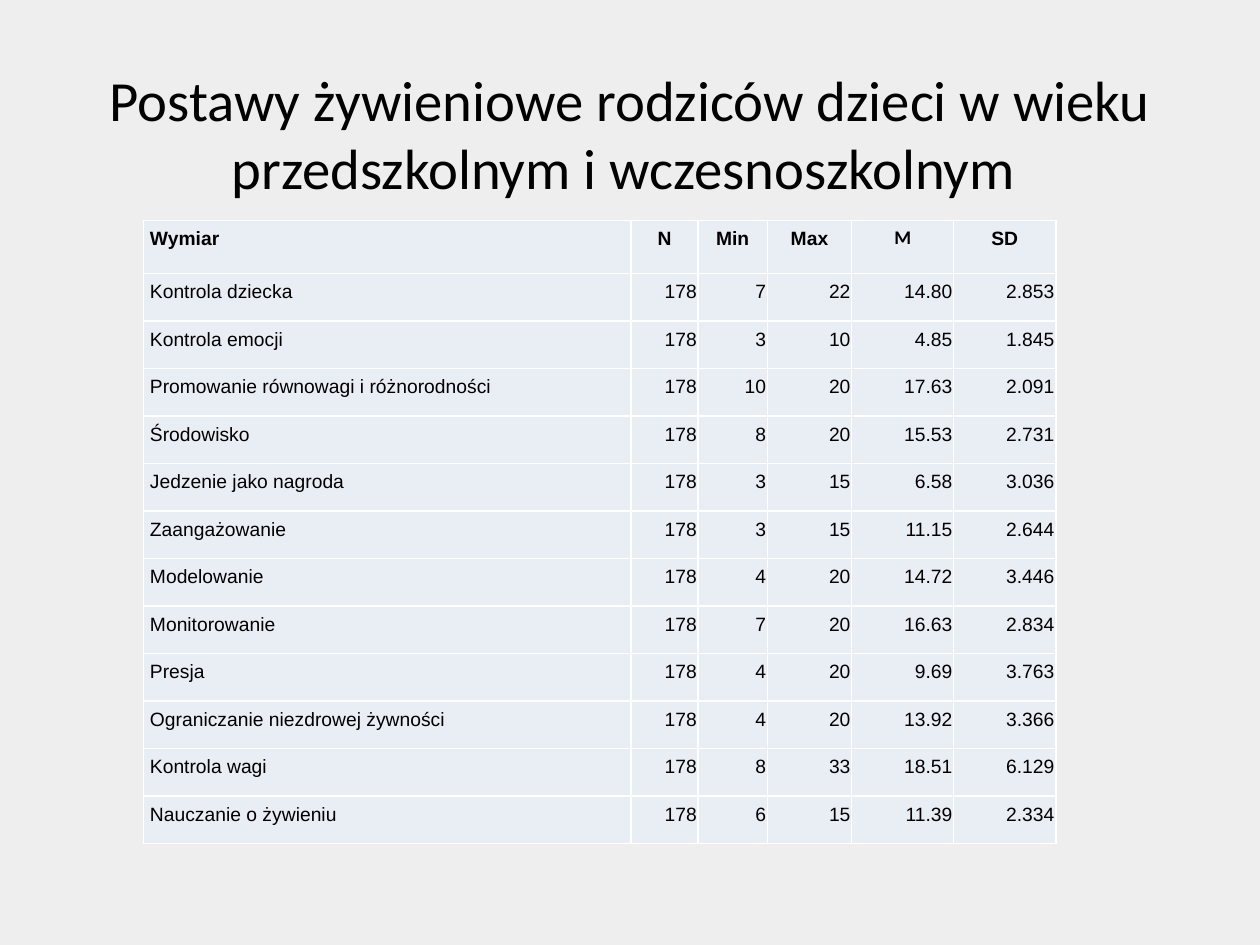
from lxml import etree
from pptx import Presentation
from pptx.dml.color import RGBColor
from pptx.enum.text import MSO_ANCHOR, PP_ALIGN
from pptx.oxml.ns import qn
from pptx.util import Inches, Pt

BOTTOM = MSO_ANCHOR.BOTTOM
LEFT, CENTER, RIGHT = PP_ALIGN.LEFT, PP_ALIGN.CENTER, PP_ALIGN.RIGHT

BACK, BLACK, WHITE, PALE = "EEEEEE", "000000", "FFFFFF", "E9EDF4"

# The trailing space shifts the centred second line a little to the left
TITLE = "Postawy żywieniowe rodziców dzieci w wieku przedszkolnym i wczesnoszkolnym "
HEADS = ["Wymiar", "N", "Min", "Max", "M", "SD"]
COUNT = "178"
ROWS = [
    ("Kontrola dziecka", "7", "22", "14.80", "2.853"),
    ("Kontrola emocji", "3", "10", "4.85", "1.845"),
    ("Promowanie równowagi i różnorodności", "10", "20", "17.63", "2.091"),
    ("Środowisko", "8", "20", "15.53", "2.731"),
    ("Jedzenie jako nagroda", "3", "15", "6.58", "3.036"),
    ("Zaangażowanie", "3", "15", "11.15", "2.644"),
    ("Modelowanie", "4", "20", "14.72", "3.446"),
    ("Monitorowanie", "7", "20", "16.63", "2.834"),
    ("Presja", "4", "20", "9.69", "3.763"),
    ("Ograniczanie niezdrowej żywności", "4", "20", "13.92", "3.366"),
    ("Kontrola wagi", "8", "33", "18.51", "6.129"),
    ("Nauczanie o żywieniu", "6", "15", "11.39", "2.334"),
]
WIDTHS = [3.87, 0.53, 0.55, 0.67, 0.81, 0.81]
HEIGHT, HEAD = 4.95, 0.42


def color(code):
    return RGBColor.from_string(code)


def style(para, face, size, align, bold=False):
    para.alignment = align
    font = para.font
    font.name, font.size, font.bold = face, Pt(size), bold
    font.color.rgb = color(BLACK)


def add_title(slide):
    box = slide.shapes.add_textbox(Inches(0.5), Inches(0.39), Inches(9), Inches(1.25))
    frame = box.text_frame
    frame.word_wrap = True
    frame.vertical_anchor = BOTTOM
    frame.text = TITLE
    style(frame.paragraphs[0], "Calibri", 32.4, CENTER)


def add_border(cell, code, width):
    props = cell._tc.get_or_add_tcPr()
    for side in ("lnL", "lnR", "lnT", "lnB"):
        line = etree.SubElement(props, qn(f"a:{side}"), w=str(Pt(width)))
        fill = etree.SubElement(line, qn("a:solidFill"))
        etree.SubElement(fill, qn("a:srgbClr"), val=code)


def fill_cell(cell, text, align, head):
    add_border(cell, WHITE, 1)
    cell.fill.solid()
    cell.fill.fore_color.rgb = color(PALE)
    cell.margin_left = cell.margin_right = Inches(0.05 if head else 0.01)
    cell.margin_top, cell.margin_bottom = Inches(0.01), 0
    cell.text = text
    para = cell.text_frame.paragraphs[0]
    if not head:
        para._p.get_or_add_pPr().set("marL", str(Inches(0.04)))
    para.line_spacing, para.space_after = Pt(16), Pt(10)
    style(para, "Calibri" if text == "M" else "Arial", 11, align, head)


def add_grid(slide):
    data = [HEADS] + [(name, COUNT, *rest) for name, *rest in ROWS]
    table = slide.shapes.add_table(
        len(data), len(HEADS), Inches(1.14), Inches(1.75),
        Inches(sum(WIDTHS)), Inches(HEIGHT)).table
    for col, width in zip(table.columns, WIDTHS):
        col.width = Inches(width)
    for r, values in enumerate(data):
        head = r == 0
        table.rows[r].height = Inches(HEAD if head else (HEIGHT - HEAD) / len(ROWS))
        for c, text in enumerate(values):
            align = LEFT if c == 0 else CENTER if head else RIGHT
            fill_cell(table.cell(r, c), text, align, head)


def main():
    deck = Presentation()
    deck.slide_width, deck.slide_height = Inches(10), Inches(7.5)
    slide = deck.slides.add_slide(deck.slide_layouts[6])

    # Background
    fill = slide.background.fill
    fill.solid()
    fill.fore_color.rgb = color(BACK)

    # Heading and results
    add_title(slide)
    add_grid(slide)
    deck.save("out.pptx")


if __name__ == "__main__":
    main()
